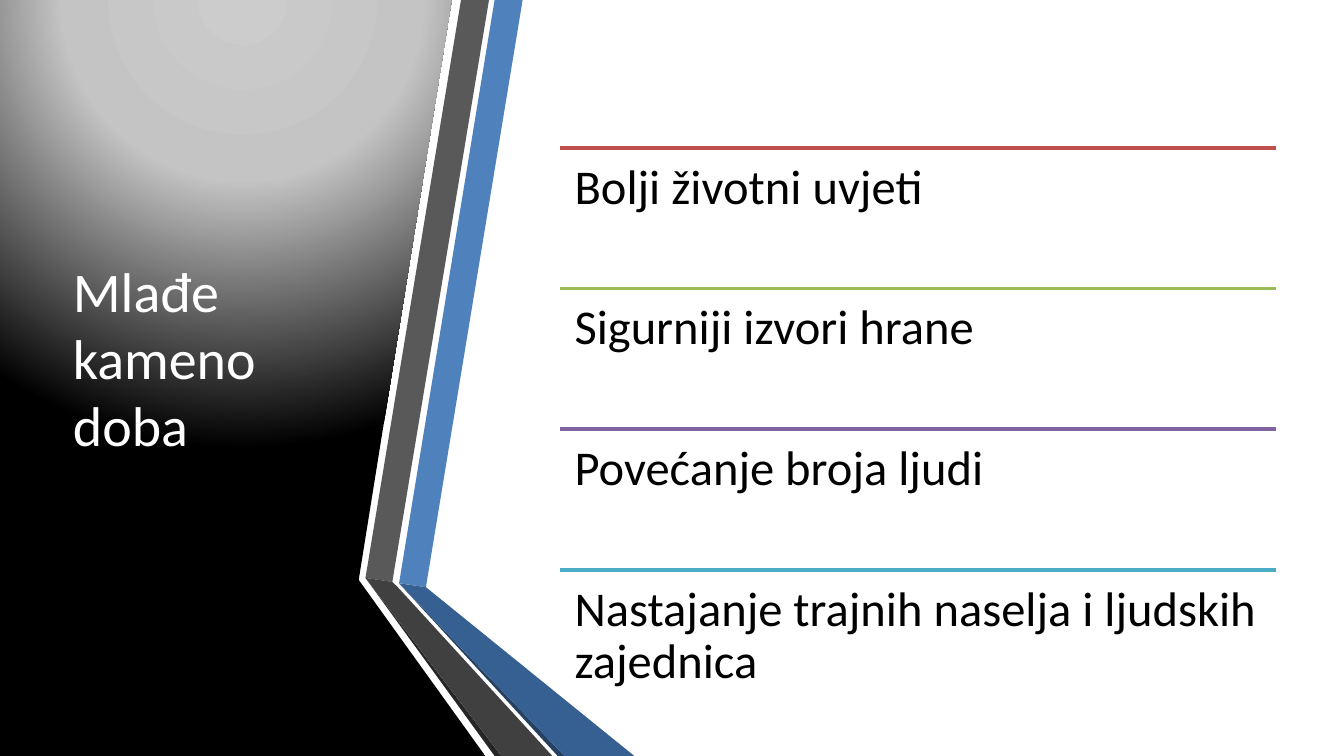
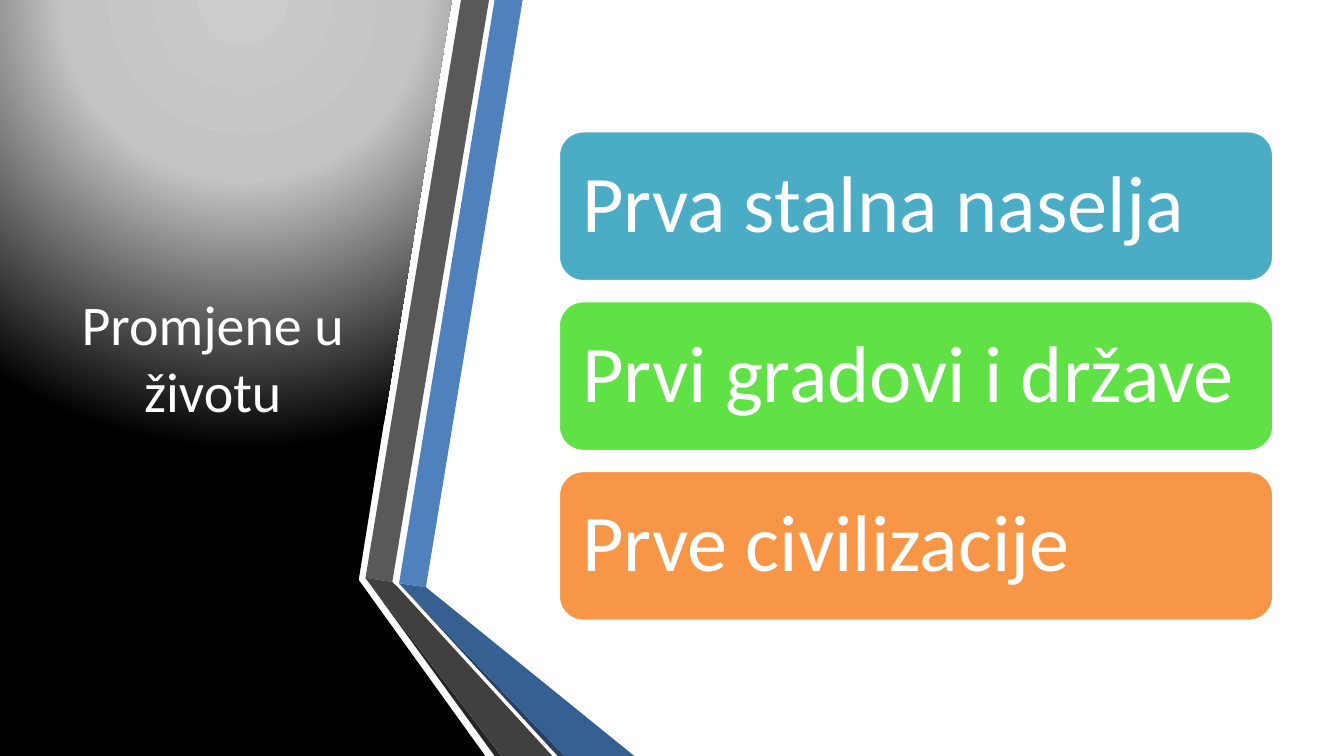
from lxml import etree
from pptx import Presentation
from pptx.dml.color import RGBColor
from pptx.enum.shapes import MSO_CONNECTOR, MSO_SHAPE
from pptx.enum.text import MSO_ANCHOR, PP_ALIGN
from pptx.oxml import parse_xml
from pptx.oxml.ns import qn
from pptx.util import Pt

STRAIGHT = MSO_CONNECTOR.STRAIGHT
ROUNDED = MSO_SHAPE.ROUNDED_RECTANGLE
TOP, MIDDLE = MSO_ANCHOR.TOP, MSO_ANCHOR.MIDDLE
LEFT, CENTER = PP_ALIGN.LEFT, PP_ALIGN.CENTER

WHITE = RGBColor(0xFF, 0xFF, 0xFF)
BLACK = RGBColor(0x00, 0x00, 0x00)
BLUE = RGBColor(0x4F, 0x81, 0xBD)
DARK_BLUE = RGBColor(0x37, 0x60, 0x92)
NAVY = RGBColor(0x25, 0x40, 0x61)
GRAY = RGBColor(0x59, 0x59, 0x59)
DARK_GRAY = RGBColor(0x40, 0x40, 0x40)
CHARCOAL = RGBColor(0x26, 0x26, 0x26)
RED = RGBColor(0xC0, 0x50, 0x4D)
GREEN = RGBColor(0x9B, 0xBB, 0x59)
PURPLE = RGBColor(0x80, 0x64, 0xA2)
TEAL = RGBColor(0x4B, 0xAC, 0xC6)
LIME = RGBColor(0x60, 0xE1, 0x46)
ORANGE = RGBColor(0xF7, 0x96, 0x46)

WIDTH, HEIGHT = 720, 405

PANEL_GRADIENT = """
<a:gradFill xmlns:a="http://schemas.openxmlformats.org/drawingml/2006/main" rotWithShape="1">
  <a:gsLst>
    <a:gs pos="0"><a:srgbClr val="CCCCCC"/></a:gs>
    <a:gs pos="40000"><a:srgbClr val="C4C4C4"/></a:gs>
    <a:gs pos="100000"><a:srgbClr val="000000"/></a:gs>
  </a:gsLst>
  <a:path path="circle"><a:fillToRect l="50000" t="-80000" r="50000" b="180000"/></a:path>
</a:gradFill>"""

# Corners where the folded ribbons bend
GRAY_BEND, GRAY_INNER = (195.8, 309.6), (210.2, 311.8)
BLUE_BEND, BLUE_INNER = (213.8, 312.5), (228.2, 314.6)

PANEL = [(0, 0), (242, 0), (192.2, 310.7), (260, HEIGHT), (0, HEIGHT)]
RIBBONS = [
    (BLUE, [BLUE_BEND, BLUE_INNER, (280, 0), (265, 0)]),
    (GRAY, [(262, 0), (247, 0), GRAY_BEND, GRAY_INNER]),
    (CHARCOAL, [GRAY_BEND, (265, HEIGHT), (268.6, HEIGHT)]),
    (NAVY, [BLUE_BEND, (298.8, HEIGHT), (302.4, HEIGHT)]),
    (DARK_BLUE, [BLUE_BEND, (302.4, HEIGHT), (339.8, HEIGHT), BLUE_INNER]),
    (DARK_GRAY, [(295.9, HEIGHT), (213.1, 314.6), GRAY_INNER, GRAY_BEND, (268.6, HEIGHT)]),
]


def add_polygon(slide, points):
    corners = [(Pt(x), Pt(y)) for x, y in points]
    builder = slide.shapes.build_freeform(*corners[0], scale=1.0)
    builder.add_line_segments(corners[1:], close=True)
    shape = builder.convert_to_shape()
    shape.shadow.inherit = False
    shape.line.fill.background()
    return shape


def write(shape, text, size, color, anchor=TOP, align=LEFT, spacing=1.0, margins=None):
    frame = shape.text_frame
    frame.word_wrap = True
    frame.vertical_anchor = anchor
    if margins:
        for side, margin in margins.items():
            setattr(frame, "margin_" + side, Pt(margin))
    para = frame.paragraphs[0]
    para.alignment = align
    para.line_spacing = spacing
    span = para.add_run()
    span.text = text
    for name, value in {"name": "Calibri", "size": Pt(size)}.items():
        setattr(span.font, name, value)
    span.font.color.rgb = color


deck = Presentation()
deck.slide_width, deck.slide_height = Pt(WIDTH), Pt(HEIGHT)

# Shared frame: dark panel, ribbons and title
slides = []
for title, align in [("Mlađe kameno doba", LEFT), ("Promjene u životu", CENTER)]:
    slide = deck.slides.add_slide(deck.slide_layouts[6])
    slide.background.fill.solid()
    slide.background.fill.fore_color.rgb = WHITE
    panel = add_polygon(slide, PANEL)
    panel.element.spPr.find(qn("a:custGeom")).addnext(parse_xml(PANEL_GRADIENT))
    for color, points in RIBBONS:
        ribbon = add_polygon(slide, points)
        ribbon.fill.solid()
        ribbon.fill.fore_color.rgb = color
    box = slide.shapes.add_textbox(Pt(32), Pt(40.5), Pt(164), Pt(301.5))
    write(box, title, 30, WHITE, MIDDLE, align)
    slides.append(slide)
conditions_slide, changes_slide = slides

# Slide 1: ruled list
CONDITIONS = [
    ("Bolji životni uvjeti", RED),
    ("Sigurniji izvori hrane", GREEN),
    ("Povećanje broja ljudi", PURPLE),
    ("Nastajanje trajnih naselja i ljudskih zajednica", TEAL),
]
ROW_LEFT, ROW_TOP, ROW_WIDTH, ROW_HEIGHT = 300, 79.2, 383.5, 75.4
ROW_MARGINS = dict.fromkeys(("left", "top", "right", "bottom"), 7.8)
for index, (text, color) in enumerate(CONDITIONS):
    top = ROW_TOP + index * ROW_HEIGHT
    rule = conditions_slide.shapes.add_connector(
        STRAIGHT, Pt(ROW_LEFT), Pt(top), Pt(ROW_LEFT + ROW_WIDTH), Pt(top))
    rule.line.color.rgb = color
    rule.line.width = Pt(2)
    etree.SubElement(rule.element.spPr, qn("a:effectLst"))
    box = conditions_slide.shapes.add_textbox(
        Pt(ROW_LEFT), Pt(top), Pt(ROW_WIDTH), Pt(ROW_HEIGHT))
    write(box, text, 26, BLACK, spacing=0.9, margins=ROW_MARGINS)

# Slide 2: stacked cards
CHANGES = [
    ("Prva stalna naselja", TEAL),
    ("Prvi gradovi i države", LIME),
    ("Prve civilizacije", ORANGE),
]
CARD_MARGINS = dict.fromkeys(("left", "top", "right", "bottom"), 9)
for index, (text, color) in enumerate(CHANGES):
    card = changes_slide.shapes.add_shape(
        ROUNDED, Pt(299), Pt(70 + index * 91), Pt(383.5), Pt(81))
    card.shadow.inherit = False
    card.fill.solid()
    card.fill.fore_color.rgb = color
    card.line.color.rgb = WHITE
    card.line.width = Pt(2)
    write(card, text, 43, WHITE, MIDDLE, spacing=0.9, margins=CARD_MARGINS)

deck.save("out.pptx")
